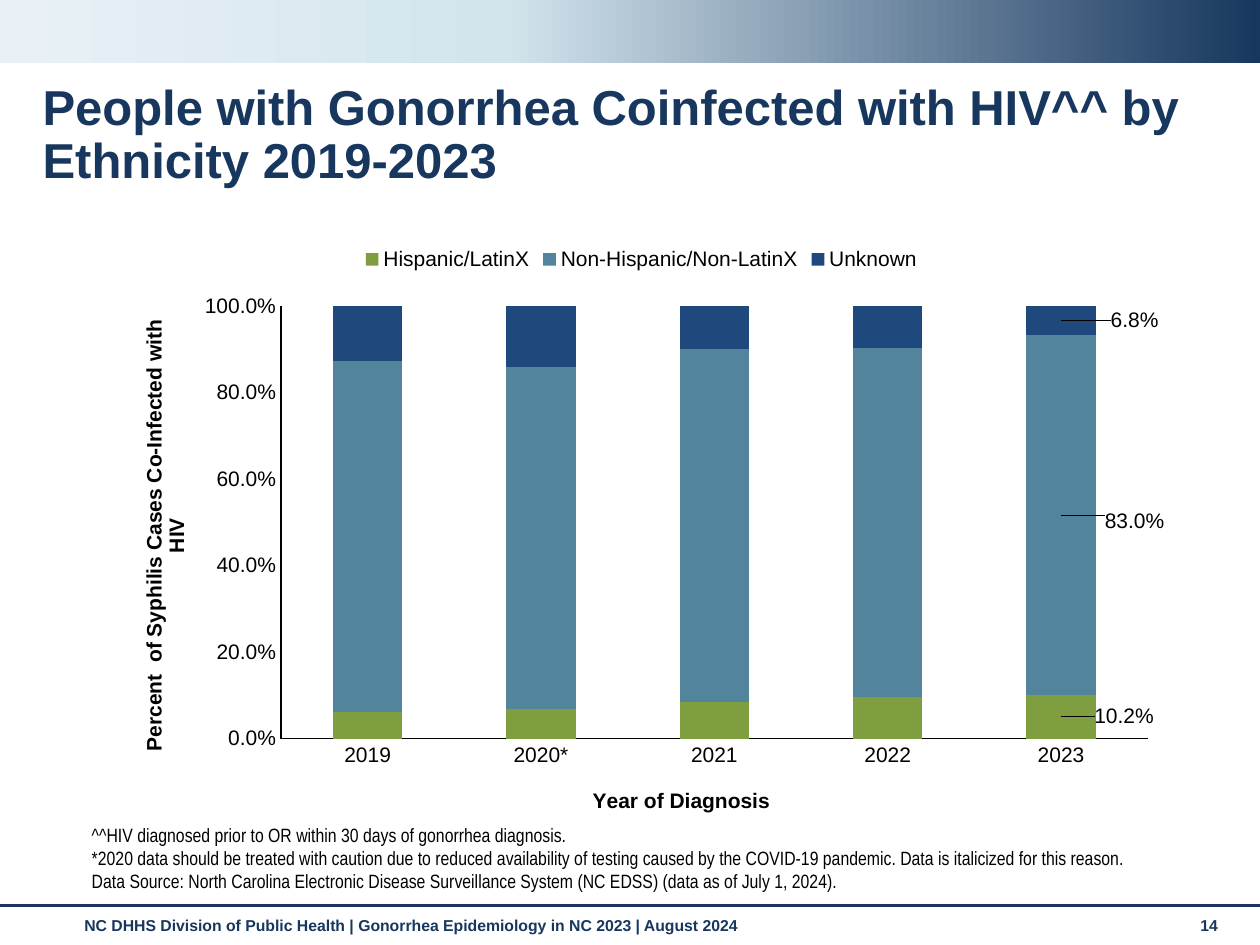
from lxml import etree
from copy import deepcopy
from pptx import Presentation
from pptx.chart.data import CategoryChartData
from pptx.dml.color import RGBColor
from pptx.enum.chart import XL_CHART_TYPE, XL_LABEL_POSITION, XL_LEGEND_POSITION, XL_TICK_MARK
from pptx.enum.shapes import MSO_CONNECTOR, MSO_SHAPE
from pptx.enum.text import MSO_ANCHOR
from pptx.oxml.ns import qn
from pptx.util import Cm, Pt

STACKED = XL_CHART_TYPE.COLUMN_STACKED
CENTER = XL_LABEL_POSITION.CENTER
LEGEND_TOP = XL_LEGEND_POSITION.TOP
NO_TICK = XL_TICK_MARK.NONE
STRAIGHT = MSO_CONNECTOR.STRAIGHT
RECTANGLE = MSO_SHAPE.RECTANGLE
TOP, BOTTOM = MSO_ANCHOR.TOP, MSO_ANCHOR.BOTTOM

SLIDE_W, SLIDE_H = 25.4, 19.05
NAVY, BLACK = "17375E", "000000"
BAND_STOPS = [(0, NAVY), (0.6, "D3E4ED"), (1, "E9F1F6")]

TITLE_FORMAT = {"name": "Arial", "size": Pt(28), "bold": True}
FOOTER_FORMAT = {"name": "Arial", "size": Pt(9), "bold": True}
NOTE_FORMAT = {"name": "Arial Narrow", "size": Pt(11), "bold": False}
CHART_FORMAT = {"name": "Arial", "size": Pt(12), "bold": False}
AXIS_TITLE_FORMAT = {"name": "Arial", "size": Pt(12), "bold": True}

NOTES = [
    "^^HIV diagnosed prior to OR within 30 days of gonorrhea diagnosis.",
    "*2020 data should be treated with caution due to reduced availability of testing "
    "caused by the COVID-19 pandemic. Data is italicized for this reason.",
    "Data Source: North Carolina Electronic Disease Surveillance System (NC EDSS) "
    "(data as of July 1, 2024).",
]
YEARS = ["2019", "2020*", "2021", "2022", "2023"]
# name, shares by year, colour, offset of the last label
ETHNICITIES = [
    ("Hispanic/LatinX", [0.062, 0.068, 0.085, 0.096, 0.102], "7F9E3F", (0.06, 0)),
    ("Non-Hispanic/Non-LatinX", [0.812, 0.791, 0.816, 0.807, 0.83], "52849C", (0.07, 0.01)),
    ("Unknown", [0.127, 0.141, 0.099, 0.098, 0.068], "1F497D", (0.07, 0)),
]


def rgb(hex_color):
    return RGBColor.from_string(hex_color)


def apply_font(font, formats, color):
    for attribute, value in formats.items():
        setattr(font, attribute, value)
    font.color.rgb = rgb(color)


def add_text(slide, box, lines, formats, color, anchor=TOP, spacing=None):
    frame = slide.shapes.add_textbox(*map(Cm, box)).text_frame
    frame.word_wrap = True
    frame.vertical_anchor = anchor
    for number, line in enumerate(lines):
        paragraph = frame.add_paragraph() if number else frame.paragraphs[0]
        paragraph.line_spacing = spacing
        run = paragraph.add_run()
        run.text = line
        apply_font(run.font, formats, color)


def add_band(slide, box):
    band = slide.shapes.add_shape(RECTANGLE, *map(Cm, box))
    band.shadow.inherit = False
    band.line.fill.background()
    band.fill.gradient()
    band.fill.gradient_angle = 180
    last_stop = band.fill.gradient_stops[-1]._gs
    last_stop.addnext(deepcopy(last_stop))
    for stop, (position, color) in zip(band.fill.gradient_stops, BAND_STOPS):
        stop.position = position
        stop.color.rgb = rgb(color)


def add_footer(slide, box):
    left, top, width, height = box
    rule = slide.shapes.add_connector(STRAIGHT, Cm(left), Cm(top), Cm(left + width), Cm(top))
    rule.line.color.rgb = rgb(NAVY)
    rule.line.width = Pt(1.75)
    etree.SubElement(rule._element.spPr, qn("a:effectLst"))
    text_top = top + 0.08
    number_left = left + width - 1.45
    add_text(slide, (left + 1.45, text_top, 22.2, height - 0.08),
             ["NC DHHS Division of Public Health | Gonorrhea Epidemiology in NC 2023 | August 2024"],
             FOOTER_FORMAT, NAVY)
    add_text(slide, (number_left, text_top, 1.12, height - 0.08), ["14"], FOOTER_FORMAT, NAVY)


def set_layout(parent, index, **settings):
    """Give a chart part a manual layout, as fractions of the chart."""
    for old_layout in parent.findall(qn("c:layout")):
        parent.remove(old_layout)
    layout = etree.Element(qn("c:layout"))
    manual = etree.SubElement(layout, qn("c:manualLayout"))
    for tag, value in settings.items():
        etree.SubElement(manual, qn(f"c:{tag}")).set("val", str(value))
    parent.insert(index, layout)


def format_axis(axis, title, x, y):
    axis.has_major_gridlines = False
    axis.major_tick_mark = axis.minor_tick_mark = NO_TICK
    axis.format.line.color.rgb = rgb(BLACK)
    axis.format.line.width = Pt(0.75)
    apply_font(axis.tick_labels.font, CHART_FORMAT, BLACK)
    run = axis.axis_title.text_frame.paragraphs[0].add_run()
    run.text = title
    apply_font(run.font, AXIS_TITLE_FORMAT, BLACK)
    set_layout(axis.axis_title._element, 1, xMode="edge", yMode="edge", x=x, y=y)


def add_ethnicity_chart(slide, box):
    chart_data = CategoryChartData(number_format="0.0%")
    chart_data.categories = YEARS
    for name, shares, _, _ in ETHNICITIES:
        chart_data.add_series(name, shares)
    chart = slide.shapes.add_chart(STACKED, *map(Cm, box), chart_data).chart
    chart.has_title = False
    apply_font(chart.font, CHART_FORMAT, BLACK)
    chart.has_legend = True
    chart.legend.position = LEGEND_TOP
    chart.legend.include_in_layout = False
    apply_font(chart.legend.font, CHART_FORMAT, BLACK)

    format_axis(chart.category_axis, "Year of Diagnosis", 0.45, 0.94)
    shares_axis = chart.value_axis
    format_axis(shares_axis, "Percent  of Syphilis Cases Co-Infected with HIV", 0.02, 0.14)
    shares_axis.minimum_scale, shares_axis.maximum_scale = 0, 1
    shares_axis.major_unit = 0.2
    shares_axis.tick_labels.number_format = "0.0%"
    shares_axis.tick_labels.number_format_is_linked = False

    plot = chart.plots[0]
    plot.vary_by_categories = False
    plot.gap_width, plot.overlap = 150, 100
    set_layout(plot._element.getparent(), 0, layoutTarget="inner", xMode="edge", yMode="edge",
               x=0.157, y=0.123, w=0.825, h=0.74)
    for series, (_, _, color, (dx, dy)) in zip(plot.series, ETHNICITIES):
        series.format.fill.solid()
        series.format.fill.fore_color.rgb = rgb(color)
        series.data_labels.show_value = False
        label = series.points[len(YEARS) - 1].data_label
        apply_font(label.font, CHART_FORMAT, BLACK)
        label.position = CENTER
        set_layout(label._get_or_add_dLbl(), 1, x=dx, y=dy)


def main():
    presentation = Presentation()
    presentation.slide_width, presentation.slide_height = Cm(SLIDE_W), Cm(SLIDE_H)
    slide = presentation.slides.add_slide(presentation.slide_layouts[6])
    add_band(slide, (0, 0, SLIDE_W, 1.27))
    add_footer(slide, (0, 18.26, SLIDE_W, 0.79))
    add_text(slide, (0.61, 1.55, 24.64, 1.52),
             ["People with Gonorrhea Coinfected with HIV^^ by Ethnicity 2019-2023"],
             TITLE_FORMAT, NAVY, spacing=0.9)
    add_text(slide, (1.6, 16.51, 22.2, 1.6), NOTES, NOTE_FORMAT, BLACK, anchor=BOTTOM)
    add_ethnicity_chart(slide, (2.34, 4.72, 21.18, 11.79))
    presentation.save("out.pptx")


if __name__ == "__main__":
    main()
